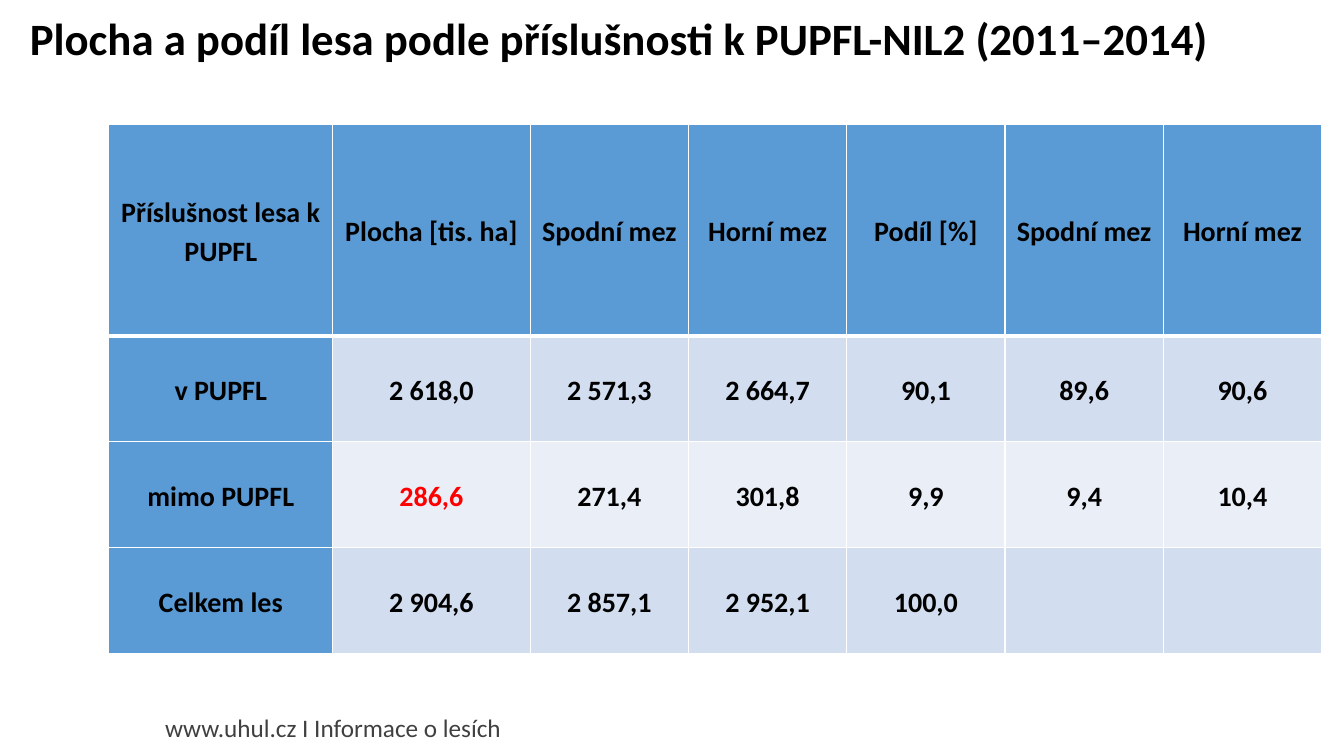
from lxml import etree
from pptx import Presentation
from pptx.dml.color import RGBColor
from pptx.enum.text import MSO_ANCHOR, PP_ALIGN
from pptx.oxml.ns import qn
from pptx.util import Inches, Pt

CENTER = PP_ALIGN.CENTER
TOP, MIDDLE = MSO_ANCHOR.TOP, MSO_ANCHOR.MIDDLE
TITLE_ONLY = 5

FONT = "Calibri"
BLACK, GREY, RED, WHITE = "000000", "404040", "FF0000", "FFFFFF"
HEADER_BLUE = "5B9BD5"
BANDS = ("D2DEEF", "EAEFF7")

COLUMN_WIDTHS = [2.22, 1.96] + [1.57] * 5
ROW_HEIGHT = 1.05
ROW_SPANS = (2, 1, 1, 1)
ROWS = (
    ("Příslušnost lesa k PUPFL", "Plocha [tis. ha]", "Spodní mez", "Horní mez",
     "Podíl [%]", "Spodní mez", "Horní mez"),
    ("v PUPFL", "2 618,0", "2 571,3", "2 664,7", "90,1", "89,6", "90,6"),
    ("mimo PUPFL", "286,6", "271,4", "301,8", "9,9", "9,4", "10,4"),
    ("Celkem les", "2 904,6", "2 857,1", "2 952,1", "100,0", "", ""),
)
HIGHLIGHTED = (2, 1)


def rgb(value):
    return RGBColor.from_string(value)


def write(text_frame, text, size, color, bold=False, align=None, spacing=0.9):
    paragraph = text_frame.paragraphs[0]
    paragraph.text = text
    paragraph.alignment = align
    paragraph.line_spacing = spacing
    font = paragraph.font
    font.name, font.size, font.bold = FONT, Pt(size), bold
    font.color.rgb = rgb(color)


def place(shape, left, top, width, height):
    shape.left, shape.top = Inches(left), Inches(top)
    shape.width, shape.height = Inches(width), Inches(height)


def add_title(slide, text):
    title = slide.shapes.title
    place(title, -0.51, 0.12, 13.31, 0.69)
    title.text_frame.vertical_anchor = TOP
    write(title.text_frame, text, 32, BLACK, bold=True, align=CENTER)


def add_footer(slide, text):
    footer = slide.shapes.add_textbox(0, 0, 0, 0)
    place(footer, 1.54, 7.05, 6.23, 0.4)
    footer.text_frame.word_wrap = True
    write(footer.text_frame, text, 18, GREY)


def set_borders(cell, color, **widths):
    """Draw the cell's sides, given as L, R, T and B widths in points."""
    properties = cell._tc.get_or_add_tcPr()
    for side, width in widths.items():
        line = etree.SubElement(properties, qn(f"a:ln{side}"), w=str(Pt(width)))
        fill = etree.SubElement(line, qn("a:solidFill"))
        etree.SubElement(fill, qn("a:srgbClr"), val=color)


def format_cell(cell, row, column):
    set_borders(cell, WHITE, L=1, R=1, T=3 if row == 1 else 1, B=3 if row == 0 else 1)
    is_heading = row == 0 or column == 0
    cell.fill.solid()
    cell.fill.fore_color.rgb = rgb(HEADER_BLUE if is_heading else BANDS[(row - 1) % 2])
    cell.vertical_anchor = MIDDLE
    cell.margin_left = cell.margin_right = Inches(0.05)
    cell.margin_top = cell.margin_bottom = 0
    color = RED if (row, column) == HIGHLIGHTED else BLACK
    write(cell.text_frame, ROWS[row][column], 20, color, True, CENTER, 1.15)


def add_forest_table(slide):
    frame = slide.shapes.add_table(
        len(ROWS), len(COLUMN_WIDTHS), Inches(1.08), Inches(1.23),
        Inches(sum(COLUMN_WIDTHS)), Inches(ROW_HEIGHT * sum(ROW_SPANS)))
    table = frame.table
    for column, width in zip(table.columns, COLUMN_WIDTHS):
        column.width = Inches(width)
    for row, span in zip(table.rows, ROW_SPANS):
        row.height = Inches(ROW_HEIGHT * span)
    for row in range(len(ROWS)):
        for column in range(len(COLUMN_WIDTHS)):
            format_cell(table.cell(row, column), row, column)


def main():
    presentation = Presentation()
    presentation.slide_width = Inches(13.33)
    presentation.slide_height = Inches(7.5)
    slide = presentation.slides.add_slide(presentation.slide_layouts[TITLE_ONLY])
    add_footer(slide, "www.uhul.cz I Informace o lesích")
    add_title(slide, "Plocha a podíl lesa podle příslušnosti k PUPFL-NIL2 (2011–2014)")
    add_forest_table(slide)
    presentation.save("out.pptx")


if __name__ == "__main__":
    main()
